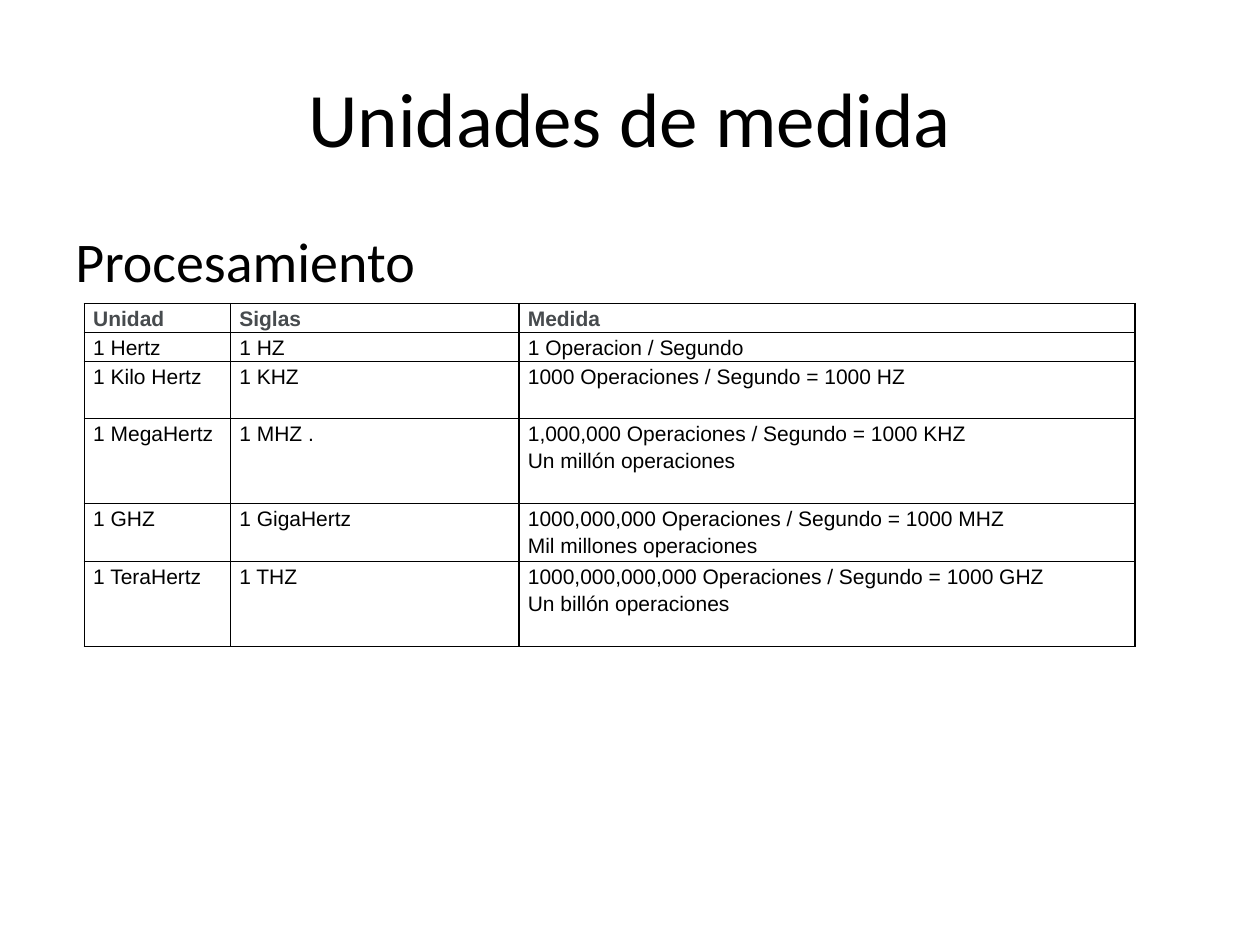
import pptx
import pptx.util
import pptx.dml.color
import pptx.enum.text
from lxml import etree

COLORS = {"text": "000000", "header": "474B4E", "border": "000000"}
ALIGN = pptx.enum.text.PP_ALIGN
ANCHOR = pptx.enum.text.MSO_ANCHOR
Inches = pptx.util.Inches


def add_span(para, text, font, size, color, bold=False):
    span = para.add_run()
    span.text = text
    span.font.name = font
    span.font.size = pptx.util.Pt(size)
    span.font.bold = bold
    span.font.color.rgb = pptx.dml.color.RGBColor.from_string(COLORS[color])


def add_borders(cell):
    properties = cell._tc.get_or_add_tcPr()
    for index, side in enumerate(("lnL", "lnR", "lnT", "lnB")):
        line = etree.Element(pptx.oxml.ns.qn(f"a:{side}"), w=str(pptx.util.Pt(1)))
        fill = etree.SubElement(line, pptx.oxml.ns.qn("a:solidFill"))
        etree.SubElement(fill, pptx.oxml.ns.qn("a:srgbClr"), val=COLORS["border"])
        properties.insert(index, line)


deck = pptx.Presentation()
deck.slide_width, deck.slide_height = Inches(10), Inches(7.5)
page = deck.slides.add_slide(deck.slide_layouts[6])

# Title and subtitle share the same margins
margin = deck.slide_width * 0.05
headings = [
    ("Unidades de medida", 0.3, 1.25, 44, ALIGN.CENTER, ANCHOR.MIDDLE),
    ("Procesamiento", 1.75, 0.74, 32, ALIGN.LEFT, ANCHOR.TOP),
]
for text, top, height, size, align, anchor in headings:
    box = page.shapes.add_textbox(int(margin), Inches(top),
                                  int(deck.slide_width - 2 * margin), Inches(height))
    box.text_frame.word_wrap = True
    box.text_frame.vertical_anchor = anchor
    para = box.text_frame.paragraphs[0]
    para.alignment = align
    add_span(para, text, "Calibri", size, "text")

# Table content: height in text lines, then the cells of the row
rows = [
    (1, "Unidad", "Siglas", "Medida"),
    (1, "1 Hertz", "1 HZ", "1 Operacion / Segundo"),
    (2, "1 Kilo Hertz", "1 KHZ", "1000 Operaciones / Segundo = 1000 HZ"),
    (3, "1 MegaHertz", "1 MHZ .",
     "1,000,000 Operaciones / Segundo = 1000 KHZ\nUn millón operaciones"),
    (2, "1 GHZ", "1 GigaHertz",
     "1000,000,000 Operaciones / Segundo = 1000 MHZ\nMil millones operaciones"),
    (3, "1 TeraHertz", "1 THZ",
     "1000,000,000,000 Operaciones / Segundo = 1000 GHZ\nUn billón operaciones"),
]
column_widths = [1.16, 2.29, 4.89]
line_height = 2.7 / sum(row[0] for row in rows)

# Table grid
frame = page.shapes.add_table(len(rows), len(column_widths), Inches(0.67), Inches(2.41),
                              Inches(sum(column_widths)), Inches(2.7))
table = frame.table
table.first_row = table.horz_banding = False
for column, width in zip(table.columns, column_widths):
    column.width = Inches(width)

# Table cells
for r, (lines, *texts) in enumerate(rows):
    table.rows[r].height = Inches(lines * line_height)
    for c, text in enumerate(texts):
        cell = table.cell(r, c)
        cell.margin_left = cell.margin_right = Inches(0.07)
        cell.margin_top = cell.margin_bottom = 0
        cell.fill.background()
        add_borders(cell)
        for i, line in enumerate(text.split("\n")):
            para = cell.text_frame.add_paragraph() if i else cell.text_frame.paragraphs[0]
            para.line_spacing = 1.15
            add_span(para, line, "Arial", 12, "text" if r else "header", bold=r == 0)

deck.save("out.pptx")
